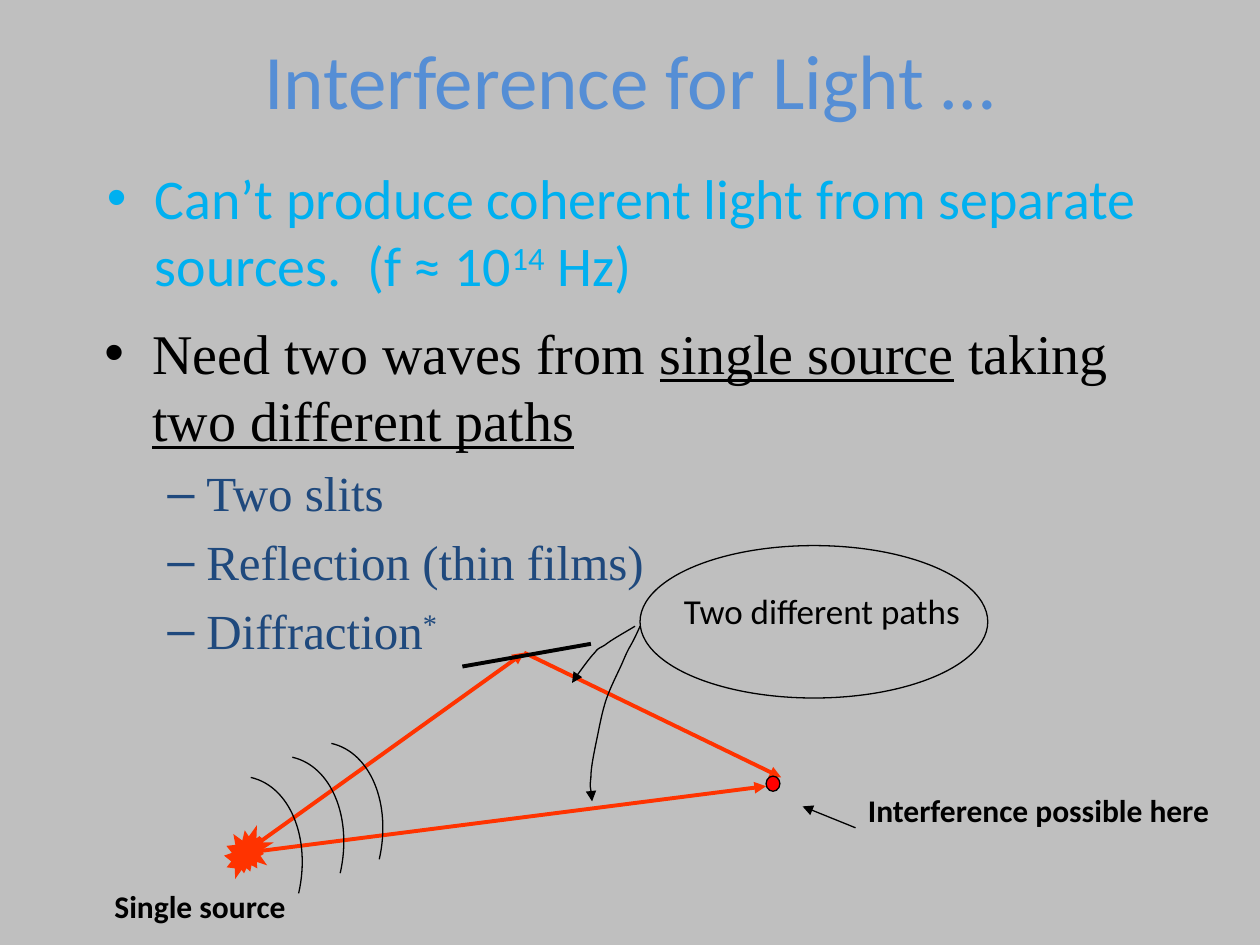
"""Build a slide on how interference of light needs a single source and two paths."""
from pptx import Presentation, util as u
from pptx.dml.color import RGBColor
from pptx.enum import shapes, text
from pptx.oxml.ns import qn
from lxml import etree

COLORS = {"page": "BFBFBF", "title": "558ED5", "claim": "00B0F0", "ink": "000000",
          "method": "1F497D", "ray": "FF3300", "target": "FF0000"}
SANS, SERIF = "Calibri", "Times New Roman"
WIDTH, HEIGHT = 10, 7.5

TITLE = [dict(spans=[("Interference for Light …", "")], size=44, color="title")]
CLAIM = [dict(spans=[("Can’t produce coherent light from separate sources.  (f ≈ 10", ""),
                     ("14", "super"), (" Hz)", "")], size=32, color="claim", bullet="•")]
NEEDS = [dict(spans=[("Need two waves from ", ""), ("single source", "under"),
                     (" taking ", ""), ("two different paths", "under")],
              size=32, color="ink", font=SERIF, bullet="•")]
NEEDS += [dict(spans=spans, size=28, color="method", font=SERIF, bullet="–", level=1)
          for spans in ([("Two slits", "")], [("Reflection (thin films)", "")],
                        [("Diffraction", ""), ("*", "super")])]
LABELS = [("Single source", (0.81, 6.99, 2.84, 0.51), 18, True),
          ("Two different paths", (5.33, 4.63, 2.47, 0.79), 20, False),
          ("Interference possible here", (6.79, 6.23, 3.21, 0.93), 18, True)]
INDENTS = {0: (0.38, -0.38), 1: (0.81, -0.31)}

SOURCE, MIRROR_HIT = (1.94, 6.77), (4.16, 5.18)
RAYS = [(SOURCE, MIRROR_HIT), (MIRROR_HIT, (6.2, 6.17)), (SOURCE, (6.08, 6.24))]
MIRROR = ((3.67, 5.29), (4.69, 5.11))
POINTER = ((6.79, 6.57), (6.37, 6.4))
WAVE_STARTS = [(1.99, 6.17), (2.32, 6.01), (2.63, 5.9)]
WAVE_CURVE = [(0, 0), (0.31, 0.07), (0.48, 0.48), (0.38, 0.92)]
CALLOUT_CURVES = [
    [(5.04, 4.97), (4.94, 5.03), (4.85, 5.08), (4.8, 5.12), (4.75, 5.15), (4.75, 5.14),
     (4.72, 5.18), (4.68, 5.22), (4.61, 5.32), (4.58, 5.36), (4.55, 5.4), (4.54, 5.41),
     (4.54, 5.42)],
    [(5.08, 4.97), (5.05, 5.04), (5.02, 5.1), (4.99, 5.15), (4.97, 5.19), (4.97, 5.19),
     (4.94, 5.26), (4.91, 5.33), (4.83, 5.48), (4.8, 5.59), (4.77, 5.69), (4.75, 5.81),
     (4.73, 5.9), (4.71, 6), (4.69, 6.1), (4.69, 6.17), (4.68, 6.25), (4.7, 6.32),
     (4.7, 6.36)]]


def rgb(name):
    return RGBColor.from_string(COLORS[name])


def inches(values):
    return [u.Inches(value) for value in values]


def style_line(shape, color="ink", width=0.75, arrow=False):
    shape.line.color.rgb = rgb(color)
    shape.line.width = u.Pt(width)
    outline = shape.line._get_or_add_ln()
    etree.SubElement(outline, qn("a:miter"), lim="800000")
    if arrow:
        etree.SubElement(outline, qn("a:tailEnd"), type="triangle")


def add_text(page, place, paragraphs, align=text.PP_ALIGN.LEFT,
             anchor=text.MSO_ANCHOR.TOP):
    frame = page.shapes.add_textbox(*inches(place)).text_frame
    frame.word_wrap, frame.vertical_anchor = True, anchor
    for index, item in enumerate(paragraphs):
        para = frame.add_paragraph() if index else frame.paragraphs[0]
        para.alignment = align
        para.level = item.get("level", 0)
        para.space_before = u.Pt(0.2 * item["size"] if index else 0)
        para.font.name = item.get("font", SANS)
        para.font.size = u.Pt(item["size"])
        para.font.bold = item.get("bold", False)
        para.font.color.rgb = rgb(item["color"])
        if "bullet" in item:
            props = para._p.get_or_add_pPr()
            for key, value in zip(("marL", "indent"), INDENTS[para.level]):
                props.set(key, str(u.Inches(value)))
            marks = [etree.Element(qn("a:buFont"), typeface="Arial"),
                     etree.Element(qn("a:buChar"), char=item["bullet"])]
            for mark in marks:
                props.find(qn("a:defRPr")).addprevious(mark)
        for words, style in item["spans"]:
            span = para.add_run()
            span.text = words
            span.font.name, span.font.size = para.font.name, para.font.size
            span.font.bold = para.font.bold
            span.font.color.rgb = rgb(item["color"])
            if style == "under":
                span.font.underline = True
            elif style == "super":
                span.font._element.set("baseline", "30000")


def add_line(page, ends, **style):
    line = page.shapes.add_connector(shapes.MSO_CONNECTOR.STRAIGHT,
                                     *inches(ends[0] + ends[1]))
    style_line(line, **style)
    etree.SubElement(line._element.spPr, qn("a:effectLst"))


def add_shape(page, kind, place, fill=None, **style):
    shape = page.shapes.add_shape(kind, *inches(place))
    shape.shadow.inherit = False
    if fill:
        shape.fill.solid()
        shape.fill.fore_color.rgb = rgb(fill)
    else:
        shape.fill.background()
    style_line(shape, **style)


def add_curve(page, controls, arrow=False):
    builder = page.shapes.build_freeform(*inches(controls[0]))
    builder.add_line_segments([inches(point) for point in controls[1:]], close=False)
    curve = builder.convert_to_shape()
    segments = list(curve._element.iter(qn("a:lnTo")))
    for first in range(0, len(segments), 3):
        bezier = etree.Element(qn("a:cubicBezTo"))
        segments[first].addprevious(bezier)
        for segment in segments[first:first + 3]:
            bezier.append(segment[0])
            segment.getparent().remove(segment)
    curve.shadow.inherit = False
    curve.fill.background()
    style_line(curve, arrow=arrow)


def main():
    deck = Presentation()
    deck.slide_width, deck.slide_height = inches((WIDTH, HEIGHT))
    page = deck.slides.add_slide(deck.slide_layouts[6])
    page.background.fill.solid()
    page.background.fill.fore_color.rgb = rgb("page")

    add_text(page, (0.75, 0, 8.5, 1.25), TITLE, text.PP_ALIGN.CENTER,
             text.MSO_ANCHOR.MIDDLE)
    add_text(page, (0.75, 1.25, 8.5, 1.65), CLAIM)
    for ray in RAYS:
        add_line(page, ray, color="ray", width=2.25, arrow=True)
    add_shape(page, shapes.MSO_SHAPE.OVAL, (6.08, 6.16, 0.11, 0.12), "target")
    add_shape(page, shapes.MSO_SHAPE.EXPLOSION2, (1.81, 6.6, 0.31, 0.33), "ray",
              color="ray", width=2.25)
    for left, top in WAVE_STARTS:
        add_curve(page, [(left + x, top + y) for x, y in WAVE_CURVE])
    for controls in CALLOUT_CURVES:
        add_curve(page, controls, arrow=True)
    add_shape(page, shapes.MSO_SHAPE.OVAL, (5.08, 4.33, 2.76, 1.21))
    for words, place, size, bold in LABELS:
        add_text(page, place, [dict(spans=[(words, "")], size=size, color="ink", bold=bold)])
    add_line(page, POINTER, arrow=True)
    add_text(page, (0.73, 2.48, 8.5, 3.17), NEEDS)
    add_line(page, MIRROR, width=2.25)
    deck.save("out.pptx")


if __name__ == "__main__":
    main()
